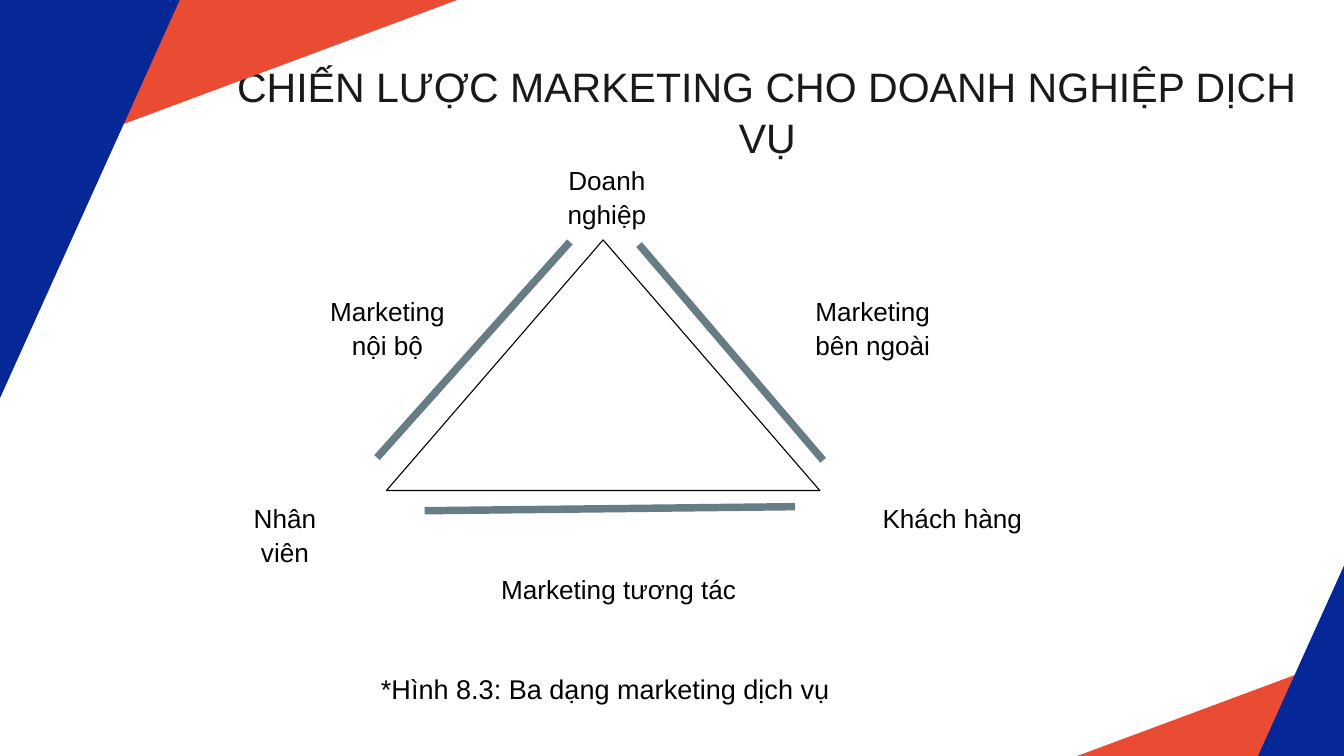
from lxml.etree import SubElement
from pptx import Presentation
from pptx.dml.color import RGBColor
from pptx.enum.shapes import MSO_CONNECTOR, MSO_SHAPE
from pptx.enum.text import PP_ALIGN
from pptx.oxml.ns import qn
from pptx.util import Inches, Pt

COLORS = {"title": "191919", "text": "000000", "bar": "687C86",
          "red": "EA4B33", "blue": "052896"}

# text, (left, top, width, height), size, line spacing, colour
TITLE = ("CHIẾN LƯỢC MARKETING CHO DOANH NGHIỆP DỊCH VỤ",
         (3.48, 0.9, 15.88, 1.49), 44, 54, "title")
LABELS = [
    ("*Hình 8.3: Ba dạng marketing dịch vụ", (5.18, 10.05, 7.66, 0.44), 29, 31.9, "text"),
    ("Doanh nghiệp", (7.89, 2.41, 2.28, 0.49), 28, 36.4, "text"),
    ("Nhân viên", (3.45, 7.44, 1.58, 0.99), 28, 36.4, "text"),
    ("Khách hàng", (12.92, 7.4, 2.5, 0.53), 28, 39, "text"),
    ("Marketing nội bộ", (4.62, 4.36, 2.29, 0.99), 28, 36.4, "text"),
    ("Marketing bên ngoài", (11.84, 4.36, 2.29, 0.99), 28, 36.4, "text"),
    ("Marketing tương tác", (7.21, 8.49, 3.99, 0.49), 28, 36.4, "text"),
]
TRIANGLE = (5.75, 3.57, 6.45, 3.73)
BARS = [(6.32, 7.6, 11.83, 7.54), (9.51, 3.64, 12.25, 6.85), (5.61, 6.81, 8.48, 3.6)]

# colour, top left corner points, sums that turn them to the bottom right
CORNERS = [
    ("red", [(0.08, 2.5), (0.08, -0.43), (7.96, -0.43)], (22.08, 11.53)),
    ("blue", [(-0.08, 6.1), (-0.08, -0.3), (2.81, -0.3)], (21.21, 11.66)),
]


def rgb(name):
    return RGBColor.from_string(COLORS[name])


def add_text(slide, text, box, size, space, color):
    frame = slide.shapes.add_textbox(*map(Inches, box)).text_frame
    margins = {f"margin_{side}": 0 for side in ("left", "top", "right", "bottom")}
    for key, value in {"word_wrap": True, **margins}.items():
        setattr(frame, key, value)
    para = frame.paragraphs[0]
    para.text = text
    para.alignment = PP_ALIGN.CENTER
    para.line_spacing = Pt(space)
    for key, value in {"name": "Arial", "size": Pt(size)}.items():
        setattr(para.font, key, value)
    para.font.color.rgb = rgb(color)


def add_triangle(slide):
    shape = slide.shapes.add_shape(MSO_SHAPE.ISOSCELES_TRIANGLE, *map(Inches, TRIANGLE))
    shape.shadow.inherit = False
    shape.fill.background()
    shape.line.color.rgb = rgb("text")
    shape.line.width = Pt(1.2)


def add_bar(slide, ends):
    bar = slide.shapes.add_connector(MSO_CONNECTOR.STRAIGHT, *map(Inches, ends))
    bar.line.color.rgb = rgb("bar")
    bar.line.width = Pt(8)
    SubElement(bar.element.spPr, qn("a:effectLst"))


def add_corner(slide, color, points):
    points = [(Inches(x), Inches(y)) for x, y in points]
    pen = slide.shapes.build_freeform(*points[0])
    pen.add_line_segments(points[1:], close=True)
    shape = pen.convert_to_shape()
    shape.shadow.inherit = False
    shape.fill.solid()
    shape.fill.fore_color.rgb = rgb(color)
    shape.line.fill.background()


def main():
    deck = Presentation()
    deck.slide_width, deck.slide_height = Inches(20), Inches(11.25)
    slide = deck.slides.add_slide(deck.slide_layouts[6])
    add_text(slide, *TITLE)
    add_triangle(slide)
    for label in LABELS:
        add_text(slide, *label)
    for ends in BARS:
        add_bar(slide, ends)
    for color, points, _ in CORNERS:
        add_corner(slide, color, points)
    for color, points, (across, down) in CORNERS:
        add_corner(slide, color, [(across - x, down - y) for x, y in points])
    deck.save("out.pptx")


if __name__ == "__main__":
    main()
